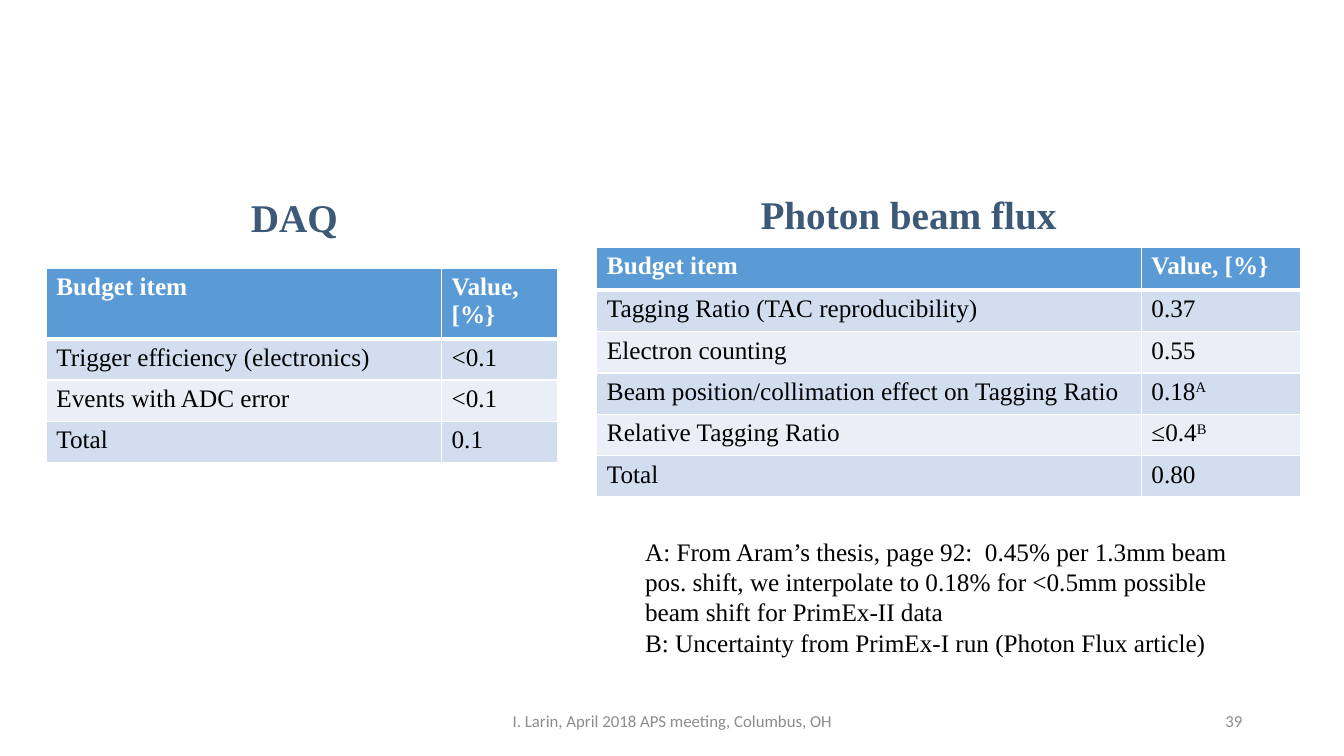
from lxml.etree import SubElement
from pptx import Presentation
from pptx.dml.color import RGBColor
from pptx.enum.text import MSO_ANCHOR as Anchor, PP_ALIGN as Align
from pptx.oxml.ns import qn
from pptx.util import Inches, Pt

SERIF, SANS = "Times New Roman", "Calibri"
BLACK, WHITE, GREY, NAVY = "000000", "FFFFFF", "8C8C8C", "3C5A78"
HEADER_FILL, BAND_FILLS = "5B9BD5", ("D2DEEF", "EAEFF7")
ROW_HEIGHT = 0.41

HEADINGS = ("Budget item", "Value, [%}")
DAQ_ROWS = [
    HEADINGS,
    ("Trigger efficiency (electronics)", "<0.1"),
    ("Events with ADC error", "<0.1"),
    ("Total", "0.1"),
]
# A third entry is a superscript footnote mark on the value
FLUX_ROWS = [
    HEADINGS,
    ("Tagging Ratio (TAC reproducibility)", "0.37"),
    ("Electron counting", "0.55"),
    ("Beam position/collimation effect on Tagging Ratio", "0.18", "A"),
    ("Relative Tagging Ratio", "≤0.4", "B"),
    ("Total", "0.80"),
]
FOOTNOTES = [
    "A: From Aram’s thesis, page 92:  0.45% per 1.3mm beam pos. shift, "
    "we interpolate to 0.18% for <0.5mm possible beam shift for PrimEx-II data",
    "B: Uncertainty from PrimEx-I run (Photon Flux article)",
]


def color(value):
    return RGBColor.from_string(value)


def format_runs(paragraph, size, font_name, font_color, bold=False):
    for run in paragraph.runs:
        run.font.size = Pt(size)
        run.font.name = font_name
        run.font.color.rgb = color(font_color)
        run.font.bold = bold


def add_text(slide, box, lines, size, font_name=SERIF, font_color=BLACK,
             bold=False, align=Align.LEFT, anchor=Anchor.MIDDLE, spacing=1.0):
    shape = slide.shapes.add_textbox(*(Inches(length) for length in box))
    text_frame = shape.text_frame
    text_frame.word_wrap = True
    text_frame.vertical_anchor = anchor
    text_frame.text = "\n".join(lines)
    for paragraph in text_frame.paragraphs:
        paragraph.alignment = align
        paragraph.line_spacing = spacing
        format_runs(paragraph, size, font_name, font_color, bold)


def add_heading(slide, left, top, text):
    add_text(slide, (left, top, 3.82, 0.53), [text], 28, font_color=NAVY,
             bold=True, align=Align.CENTER, spacing=0.9)


def add_footer(slide, left, width, text, align):
    add_text(slide, (left, 6.95, width, 0.4), [text], 12, SANS, GREY, align=align)


def set_borders(cell, top=1, bottom=1):
    properties = cell._tc.get_or_add_tcPr()
    for side, width in (("L", 1), ("R", 1), ("T", top), ("B", bottom)):
        line = SubElement(properties, qn(f"a:ln{side}"), w=str(Pt(width)))
        fill = SubElement(line, qn("a:solidFill"))
        SubElement(fill, qn("a:srgbClr"), val=WHITE)


def fill_cell(cell, text, row_index, mark=""):
    header = row_index == 0
    # Thick rule between the header and the first row
    set_borders(cell, top=3 if row_index == 1 else 1, bottom=3 if header else 1)
    cell.fill.solid()
    cell.fill.fore_color.rgb = color(
        HEADER_FILL if header else BAND_FILLS[(row_index - 1) % 2])
    cell.text_frame.text = text
    paragraph = cell.text_frame.paragraphs[0]
    if mark:
        run = paragraph.add_run()
        run.text = mark
        run._r.get_or_add_rPr().set("baseline", "30000")
    format_runs(paragraph, 18, SERIF, WHITE if header else BLACK, header)


def add_budget_table(slide, left, top, column_widths, header_height, rows):
    heights = [header_height] + [ROW_HEIGHT] * (len(rows) - 1)
    table = slide.shapes.add_table(
        len(rows), len(column_widths), Inches(left), Inches(top),
        Inches(sum(column_widths)), Inches(sum(heights))).table
    table.horz_banding = False
    for column, width in zip(table.columns, column_widths):
        column.width = Inches(width)
    for index, (item, value, *marks) in enumerate(rows):
        table.rows[index].height = Inches(heights[index])
        fill_cell(table.cell(index, 0), item, index)
        fill_cell(table.cell(index, 1), value, index, "".join(marks))


def main():
    presentation = Presentation()
    presentation.slide_width = Inches(13.33)
    presentation.slide_height = Inches(7.5)
    slide = presentation.slides.add_slide(presentation.slide_layouts[6])

    # Footer
    add_footer(slide, 4.42, 4.5, "I. Larin, April 2018 APS meeting, Columbus, OH",
               Align.CENTER)
    add_footer(slide, 9.42, 3, "39", Align.RIGHT)

    # DAQ budget
    add_budget_table(slide, 0.46, 2.66, (3.92, 1.15), 0.65, DAQ_ROWS)
    add_heading(slide, 1.01, 1.92, "DAQ")

    # Photon beam flux budget with its footnotes
    add_budget_table(slide, 5.92, 2.45, (5.4, 1.58), 0.43, FLUX_ROWS)
    add_text(slide, (6.3, 5.27, 6.24, 1.31), FOOTNOTES, 18, anchor=Anchor.TOP)
    add_heading(slide, 7.1, 1.89, "Photon beam flux")

    presentation.save("out.pptx")


if __name__ == "__main__":
    main()
